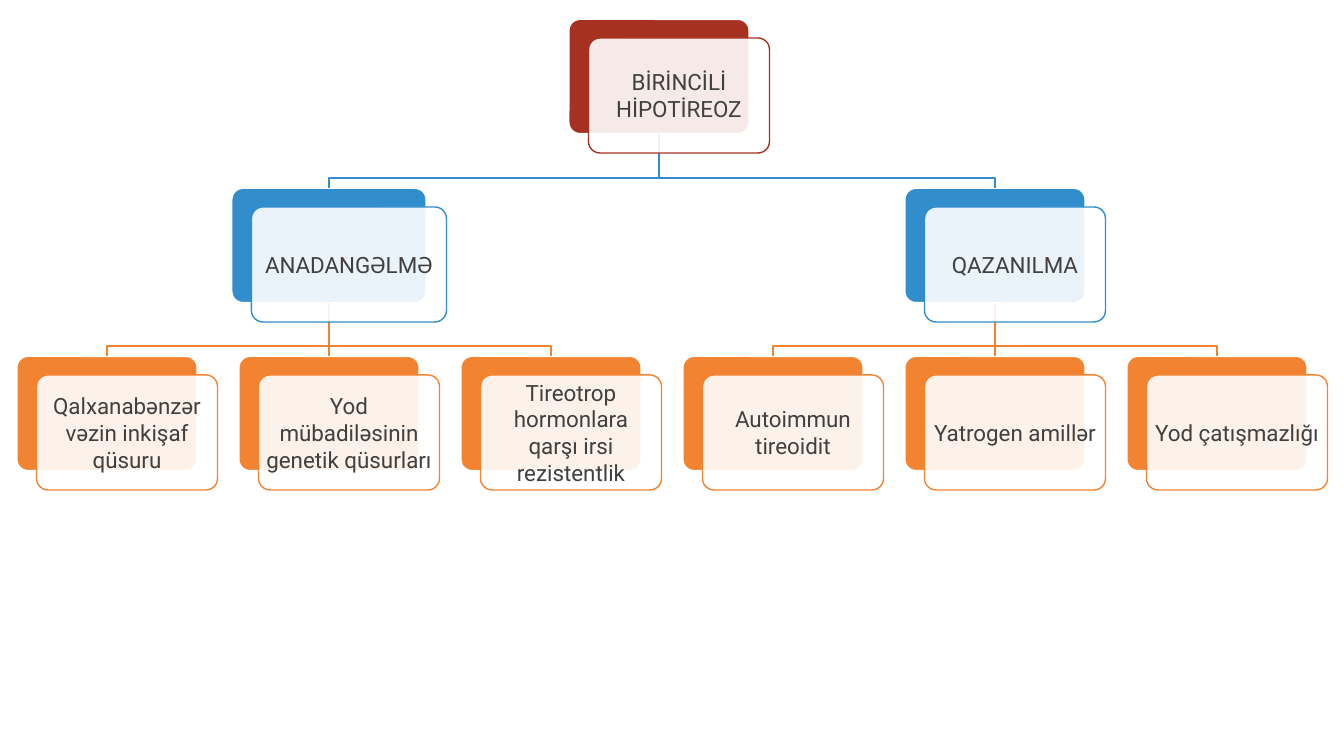
from pptx import Presentation
from pptx.dml.color import RGBColor
from pptx.enum.shapes import MSO_CONNECTOR as Connector, MSO_SHAPE as Shape
from pptx.enum.text import MSO_ANCHOR as Anchor, PP_ALIGN as Align
from pptx.oxml.ns import qn
from pptx.util import Emu, Pt
from lxml import etree

WHITE = RGBColor(0xFF, 0xFF, 0xFF)
INK = RGBColor(0x40, 0x40, 0x40)
RED = RGBColor(0xA6, 0x31, 0x21)
BLUE = RGBColor(0x31, 0x8D, 0xCB)
ORANGE = RGBColor(0xF2, 0x83, 0x30)

PX_PER_INCH = 100.8
SLIDE_SIZE = 1344, 756
LEVEL_COLORS = RED, BLUE, ORANGE
LEVEL_TOPS = 19, 188, 356
NODE_WIDTH, NODE_HEIGHT = 181, 115
CARD_DX, CARD_DY = 20, 19
BEND_GAP = 10  # from the bend of a link down to the child
CARD_PADDING = 3

COLUMNS = [107 + 222 * i for i in range(6)]
ROOT_CENTER = 659

# Text, level, centre, width and index of the parent
NODES = [
    ("BİRİNCİLİ HİPOTİREOZ", 0, ROOT_CENTER, NODE_WIDTH, None),
    ("ANADANGƏLMƏ", 1, COLUMNS[1], 195, 0),
    ("QAZANILMA", 1, COLUMNS[4], NODE_WIDTH, 0),
    ("Qalxanabənzər vəzin inkişaf qüsuru", 2, COLUMNS[0], NODE_WIDTH, 1),
    ("Yod mübadiləsinin genetik qüsurları", 2, COLUMNS[1], NODE_WIDTH, 1),
    ("Tireotrop hormonlara qarşı irsi rezistentlik", 2, COLUMNS[2], NODE_WIDTH, 1),
    ("Autoimmun tireoidit", 2, COLUMNS[3], NODE_WIDTH, 2),
    ("Yatrogen amillər", 2, COLUMNS[4], NODE_WIDTH, 2),
    ("Yod çatışmazlığı", 2, COLUMNS[5], NODE_WIDTH, 2),
]


def px(length):
    return Emu(round(length * 914400 / PX_PER_INCH))


def write(frame, text, font="Roboto", size=16, color=INK, align=Align.CENTER):
    frame.word_wrap = True
    frame.vertical_anchor = Anchor.MIDDLE
    frame.margin_left = frame.margin_right = px(CARD_PADDING)
    frame.margin_top = frame.margin_bottom = px(CARD_PADDING)
    paragraph = frame.paragraphs[0]
    paragraph.alignment = align
    run = paragraph.add_run()
    run.text = text
    run.font.name = font
    run.font.size = Pt(size)
    run.font.color.rgb = color


class Chart:
    """Organisation chart drawn on one slide."""

    def __init__(self, slide):
        self.shapes = slide.shapes
        self.line_width = Pt(1)

    def panel(self, left, top, width, fill, outline, outline_width):
        panel = self.shapes.add_shape(
            Shape.ROUNDED_RECTANGLE, px(left), px(top), px(width), px(NODE_HEIGHT))
        panel.adjustments[0] = 0.1
        panel.shadow.inherit = False
        panel.fill.solid()
        panel.fill.fore_color.rgb = fill
        panel.line.color.rgb = outline
        panel.line.width = outline_width
        return panel

    def backing(self, level, center, width):
        return self.panel(center - width / 2, LEVEL_TOPS[level], width,
                          LEVEL_COLORS[level], WHITE, Pt(1.5))

    def card(self, text, level, center, width):
        """Nearly opaque white panel, set off from its backing."""
        card = self.panel(center - width / 2 + CARD_DX, LEVEL_TOPS[level] + CARD_DY,
                          width, WHITE, LEVEL_COLORS[level], self.line_width)
        white = card.fill._xPr.find(qn("a:solidFill"))[0]
        etree.SubElement(white, qn("a:alpha")).set("val", "90000")
        write(card.text_frame, text)

    def straight_link(self, parent, child, color):
        link = self.shapes.add_connector(Connector.STRAIGHT, 0, 0, 0, 0)
        link.begin_connect(parent, 2)
        link.end_connect(child, 0)
        etree.SubElement(link._element.spPr, qn("a:effectLst"))
        link.line.color.rgb = color
        link.line.width = self.line_width

    def bent_link(self, start_x, end_x, level):
        start_y = LEVEL_TOPS[level - 1] + NODE_HEIGHT
        end_y = LEVEL_TOPS[level]
        bend_y = end_y - BEND_GAP
        outline = self.shapes.build_freeform(px(start_x), px(start_y))
        outline.add_line_segments(
            [(px(x), px(y)) for x, y in
             [(start_x, bend_y), (end_x, bend_y), (end_x, end_y)]], close=False)
        link = outline.convert_to_shape()
        link.shadow.inherit = False
        link.fill.background()
        link.line.color.rgb = LEVEL_COLORS[level]
        link.line.width = self.line_width


def main():
    deck = Presentation()
    deck.slide_width, deck.slide_height = map(px, SLIDE_SIZE)
    chart = Chart(deck.slides.add_slide(deck.slide_layouts[6]))

    backings = [chart.backing(level, center, width)
                for _, level, center, width, _ in NODES]
    for backing, (_, level, center, _, parent) in zip(backings, NODES):
        if parent is None:
            continue
        parent_center = NODES[parent][2]
        if center == parent_center:
            chart.straight_link(backings[parent], backing, LEVEL_COLORS[level])
        else:
            chart.bent_link(parent_center, center, level)
    for text, level, center, width, _ in NODES:
        chart.card(text, level, center, width)

    deck.save("out.pptx")


if __name__ == "__main__":
    main()
